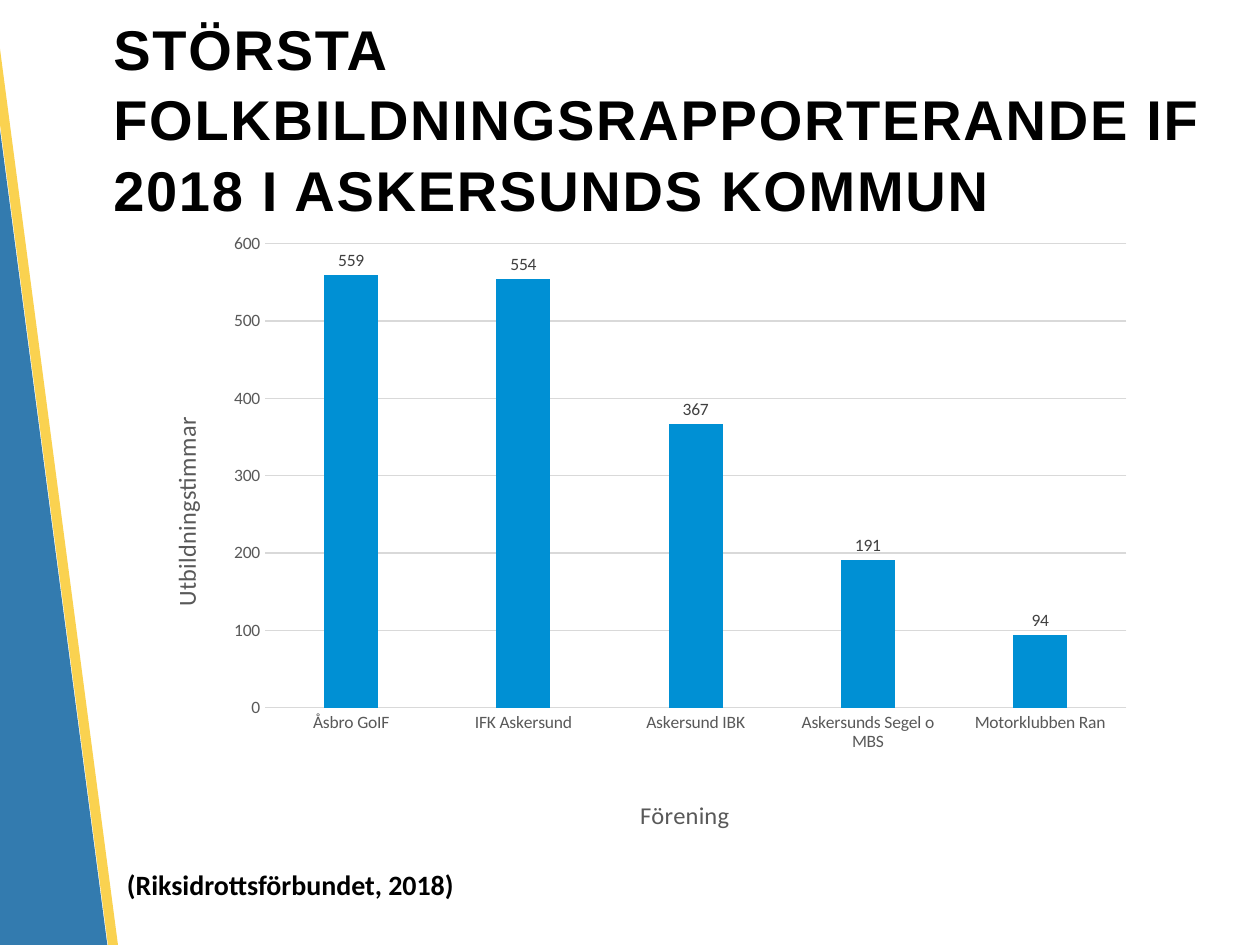
from dataclasses import dataclass
from typing import Any

from lxml.etree import SubElement
from pptx import Presentation
from pptx.chart.data import CategoryChartData
from pptx.dml.color import RGBColor
from pptx.enum.chart import XL_CHART_TYPE as ChartType
from pptx.enum.chart import XL_LABEL_POSITION as LabelPosition
from pptx.enum.chart import XL_TICK_MARK as TickMark
from pptx.enum.shapes import MSO_SHAPE as ShapeType
from pptx.enum.text import MSO_ANCHOR as Anchor
from pptx.enum.text import MSO_AUTO_SIZE as AutoSize
from pptx.enum.text import PP_ALIGN as Align
from pptx.oxml import parse_xml
from pptx.oxml.ns import nsdecls, qn
from pptx.util import Cm, Pt


@dataclass(frozen=True)
class Theme:
    heading_font: str = "Arial"
    body_font: str = "Calibri"
    text: str = "000000"
    axis_text: str = "595959"
    label_text: str = "404040"
    grid: str = "D9D9D9"
    bar: str = "0090D4"
    blue: str = "005B9C"
    yellow: str = "FAC828"
    title_size: float = 32
    source_size: float = 16
    axis_title_size: float = 14
    chart_size: float = 10


@dataclass(frozen=True)
class Stripe:
    left: float
    top: float
    width: float
    height: float
    color: str
    opacity: int


THEME = Theme()
STRIPE_ANGLE = 352.5
STRIPES = (
    Stripe(-1.32, -4.17, 2.31, 28.75, THEME.blue, 80),
    Stripe(0.97, -4.5, 0.2, 28.75, THEME.yellow, 81),
)
HOURS = {
    "Åsbro GoIF": 559,
    "IFK Askersund": 554,
    "Askersund IBK": 367,
    "Askersunds Segel o MBS": 191,
    "Motorklubben Ran": 94,
}


def set_attributes(target: Any, values: dict[str, Any]) -> None:
    for name, value in values.items():
        setattr(target, name, value)


def format_font(font: Any, name: str, size: float, color: str, bold: bool = False) -> None:
    set_attributes(font, {"name": name, "size": Pt(size), "bold": bold})
    font.color.rgb = RGBColor.from_string(color)


def format_line(line: Any, color: str) -> None:
    line.color.rgb = RGBColor.from_string(color)
    line.width = Pt(0.75)


def draw_stripe(slide: Any, stripe: Stripe) -> None:
    shape = slide.shapes.add_shape(
        ShapeType.RECTANGLE,
        Cm(stripe.left), Cm(stripe.top), Cm(stripe.width), Cm(stripe.height),
    )
    shape.rotation = STRIPE_ANGLE
    shape.shadow.inherit = False
    shape.line.fill.background()
    shape.fill.solid()
    shape.fill.fore_color.rgb = RGBColor.from_string(stripe.color)
    color = next(shape._element.spPr.iter(qn("a:srgbClr")))
    SubElement(color, qn("a:alpha")).set("val", str(stripe.opacity * 1000))


def place(element: Any, index: int, **fractions: float) -> None:
    """Give a chart part a manual layout, in fractions of the chart."""
    for old in element.findall(qn("c:layout")):
        element.remove(old)
    target = '<c:layoutTarget val="inner"/>' if "w" in fractions else ""
    modes = "".join(f'<c:{key}Mode val="edge"/>' for key in ("x", "y"))
    values = "".join(f'<c:{key} val="{value}"/>' for key, value in fractions.items())
    element.insert(index, parse_xml(
        f'<c:layout {nsdecls("c")}><c:manualLayout>{target}{modes}{values}'
        "</c:manualLayout></c:layout>"
    ))


def format_axis(axis: Any, title: str, x: float, y: float) -> None:
    set_attributes(axis, {
        "major_tick_mark": TickMark.NONE,
        "minor_tick_mark": TickMark.NONE,
    })
    format_font(axis.tick_labels.font, THEME.body_font, THEME.chart_size, THEME.axis_text)
    frame = axis.axis_title.text_frame
    frame.text = title
    format_font(frame.paragraphs[0].runs[0].font, THEME.body_font,
                THEME.axis_title_size, THEME.axis_text)
    place(axis.axis_title._element, 1, x=x, y=y)


def add_title(slide: Any, text: str) -> None:
    title = slide.shapes.title
    set_attributes(title, {
        "left": Cm(2.03), "top": Cm(0.76), "width": Cm(23.37), "height": Cm(3.18),
    })
    frame = title.text_frame
    set_attributes(frame, {
        "text": text, "word_wrap": True,
        "vertical_anchor": Anchor.MIDDLE, "auto_size": AutoSize.NONE,
    })
    paragraph = frame.paragraphs[0]
    set_attributes(paragraph, {"alignment": Align.LEFT, "line_spacing": 1.05})
    run = paragraph.runs[0]
    format_font(run.font, THEME.heading_font, THEME.title_size, THEME.text, True)
    run._r.get_or_add_rPr().set("spc", "100")


def add_hours_chart(slide: Any) -> None:
    data = CategoryChartData()
    data.categories = list(HOURS)
    data.add_series("Utbildningstimmar", list(HOURS.values()))
    chart = slide.shapes.add_chart(
        ChartType.COLUMN_CLUSTERED, Cm(2.92), Cm(4.42), Cm(20.19), Cm(12.47), data
    ).chart
    set_attributes(chart, {"has_legend": False, "has_title": False})
    format_font(chart.font, THEME.body_font, THEME.chart_size, THEME.text)
    place(chart._chartSpace.chart.plotArea, 0, x=0.12, y=0.04, w=0.86, h=0.76)

    # Axes
    format_axis(chart.category_axis, "Förening", 0.49, 0.94)
    format_line(chart.category_axis.format.line, THEME.grid)
    value_axis = chart.value_axis
    format_axis(value_axis, "Utbildningstimmar", 0.02, 0.32)
    set_attributes(value_axis, {
        "minimum_scale": 0, "maximum_scale": 600, "major_unit": 100,
        "has_major_gridlines": True,
    })
    value_axis.format.line.fill.background()
    format_line(value_axis.major_gridlines.format.line, THEME.grid)

    # Columns and their values
    plot = chart.plots[0]
    set_attributes(plot, {"gap_width": 219, "overlap": -27, "vary_by_categories": False})
    series = plot.series[0]
    series.format.fill.solid()
    series.format.fill.fore_color.rgb = RGBColor.from_string(THEME.bar)
    labels = series.data_labels
    set_attributes(labels, {"show_value": True, "position": LabelPosition.OUTSIDE_END})
    format_font(labels.font, THEME.body_font, THEME.chart_size, THEME.label_text)


def add_source(slide: Any, text: str) -> None:
    box = slide.shapes.add_textbox(Cm(2.31), Cm(17.37), Cm(7.21), Cm(0.94))
    frame = box.text_frame
    set_attributes(frame, {
        "text": text, "word_wrap": False, "auto_size": AutoSize.SHAPE_TO_FIT_TEXT,
    })
    format_font(frame.paragraphs[0].runs[0].font, THEME.body_font,
                THEME.source_size, THEME.text, True)


def main() -> None:
    presentation = Presentation()
    set_attributes(presentation, {"slide_width": Cm(25.4), "slide_height": Cm(19.05)})
    slide = presentation.slides.add_slide(presentation.slide_layouts[5])

    # Slanted stripes along the left edge
    for stripe in STRIPES:
        draw_stripe(slide, stripe)

    # Content
    add_title(slide, "STÖRSTA FOLKBILDNINGSRAPPORTERANDE IF 2018 I ASKERSUNDS KOMMUN")
    add_hours_chart(slide)
    add_source(slide, "(Riksidrottsförbundet, 2018)")
    presentation.save("out.pptx")


if __name__ == "__main__":
    main()
